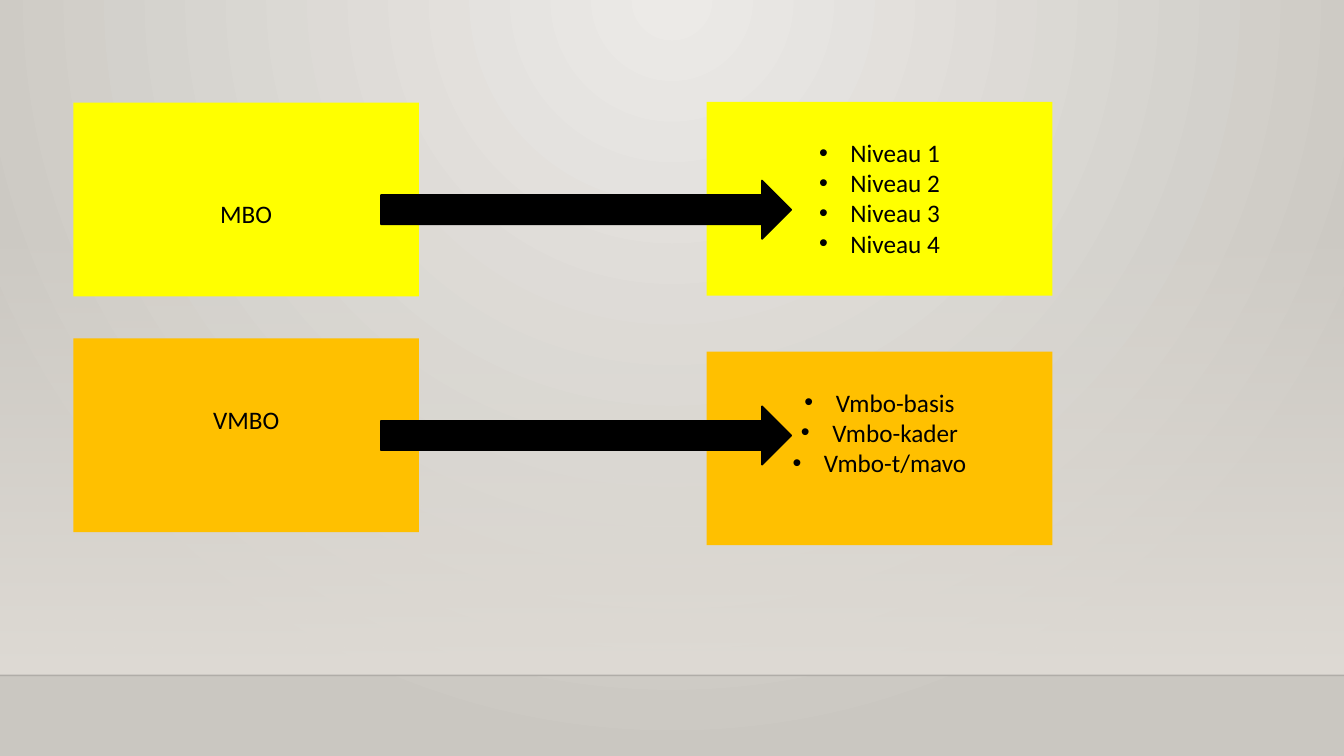
from lxml.etree import SubElement
from pptx import Presentation
from pptx.dml.color import RGBColor
from pptx.enum.shapes import MSO_CONNECTOR, MSO_SHAPE
from pptx.enum.text import MSO_ANCHOR, PP_ALIGN
from pptx.oxml.ns import qn
from pptx.util import Cm, Pt

BLACK = RGBColor(0x00, 0x00, 0x00)
YELLOW = RGBColor(0xFF, 0xFF, 0x00)
ORANGE = RGBColor(0xFF, 0xC0, 0x00)
WALL_LIGHT = RGBColor(0xEC, 0xEA, 0xE7)
WALL_DARK = RGBColor(0xCA, 0xC7, 0xC1)
HAZE = RGBColor(0xDF, 0xDB, 0xD5)

SLIDE_WIDTH, SLIDE_HEIGHT = Cm(33.87), Cm(19.05)
FLOOR_TOP = Cm(17.02)
BOX_WIDTH, BOX_HEIGHT = Cm(8.71), Cm(4.88)
SCHOOL_LEFT, LEVELS_LEFT = Cm(1.85), Cm(17.81)
ARROW_LEFT, ARROW_WIDTH, ARROW_HEIGHT = Cm(9.6), Cm(10.34), Cm(1.47)
BULLET_INDENT = Cm(0.79)


def set_gradient(fill, first, last):
    fill.gradient()
    for stop, color in zip(fill.gradient_stops, (first, last)):
        stop.color.rgb = color


def set_opacity(element, percent):
    color = next(element.iter(qn("a:srgbClr")))
    SubElement(color, qn("a:alpha")).set("val", str(percent * 1000))


def paint_background(slide):
    set_gradient(slide.background.fill, WALL_LIGHT, WALL_DARK)
    linear = next(slide._element.iter(qn("a:lin")))
    gradient = linear.getparent()
    gradient.remove(linear)
    circle = SubElement(gradient, qn("a:path"), path="circle")
    SubElement(circle, qn("a:fillToRect"), l="43000", t="0", r="43000", b="100000")


def add_plain_shape(slide, kind, left, top, width, height):
    shape = slide.shapes.add_shape(kind, left, top, width, height)
    shape.shadow.inherit = False
    shape.line.fill.background()
    return shape


def add_haze(slide):
    top = Cm(5.61)
    haze = add_plain_shape(slide, MSO_SHAPE.RECTANGLE, 0, top, SLIDE_WIDTH, FLOOR_TOP - top)
    set_gradient(haze.fill, HAZE, HAZE)
    haze.fill.gradient_angle = 270
    set_opacity(haze._element, 0)


def add_floor_line(slide):
    line = slide.shapes.add_connector(
        MSO_CONNECTOR.STRAIGHT, 0, FLOOR_TOP, SLIDE_WIDTH, FLOOR_TOP)
    line.line.color.rgb = BLACK
    line.line.width = Pt(1)
    set_opacity(line._element, 20)
    SubElement(line._element.spPr, qn("a:effectLst"))


def add_bullet(paragraph):
    properties = paragraph._p.get_or_add_pPr()
    properties.set("marL", str(BULLET_INDENT))
    properties.set("indent", str(-BULLET_INDENT))
    SubElement(properties, qn("a:buFont"), typeface="Arial")
    SubElement(properties, qn("a:buChar"), char="•")


def add_box(slide, left, top, color, lines, text_offset, bulleted=False):
    box = add_plain_shape(slide, MSO_SHAPE.RECTANGLE, left, top, BOX_WIDTH, BOX_HEIGHT)
    box.fill.solid()
    box.fill.fore_color.rgb = color
    frame = box.text_frame
    frame.word_wrap = True
    frame.vertical_anchor = MSO_ANCHOR.TOP
    frame.margin_top = text_offset
    for index, text in enumerate(lines):
        paragraph = frame.add_paragraph() if index else frame.paragraphs[0]
        paragraph.alignment = PP_ALIGN.CENTER
        if bulleted:
            add_bullet(paragraph)
        run = paragraph.add_run()
        run.text = text
        run.font.name = "Calibri"
        run.font.size = Pt(18)
        run.font.color.rgb = BLACK


def add_arrow(slide, top):
    arrow = add_plain_shape(
        slide, MSO_SHAPE.RIGHT_ARROW, ARROW_LEFT, top, ARROW_WIDTH, ARROW_HEIGHT)
    arrow.fill.solid()
    arrow.fill.fore_color.rgb = BLACK
    arrow.line.color.rgb = BLACK
    arrow.line.width = Pt(1.25)


def main():
    """Build the slide that links each school type to its levels."""
    presentation = Presentation()
    presentation.slide_width, presentation.slide_height = SLIDE_WIDTH, SLIDE_HEIGHT
    slide = presentation.slides.add_slide(presentation.slide_layouts[6])
    paint_background(slide)
    add_haze(slide)
    add_floor_line(slide)

    niveaus = [f"Niveau {number}" for number in range(1, 5)]
    directions = ["Vmbo-basis", "Vmbo-kader", "Vmbo-t/mavo"]
    add_box(slide, SCHOOL_LEFT, Cm(2.59), YELLOW, ["MBO"], Cm(2.41))
    add_box(slide, SCHOOL_LEFT, Cm(8.53), ORANGE, ["VMBO"], Cm(1.65))
    add_box(slide, LEVELS_LEFT, Cm(2.57), YELLOW, niveaus, Cm(0.89), bulleted=True)
    add_box(slide, LEVELS_LEFT, Cm(8.86), ORANGE, directions, Cm(0.89), bulleted=True)
    for top in (Cm(4.55), Cm(10.24)):
        add_arrow(slide, top)

    presentation.save("out.pptx")


if __name__ == "__main__":
    main()
